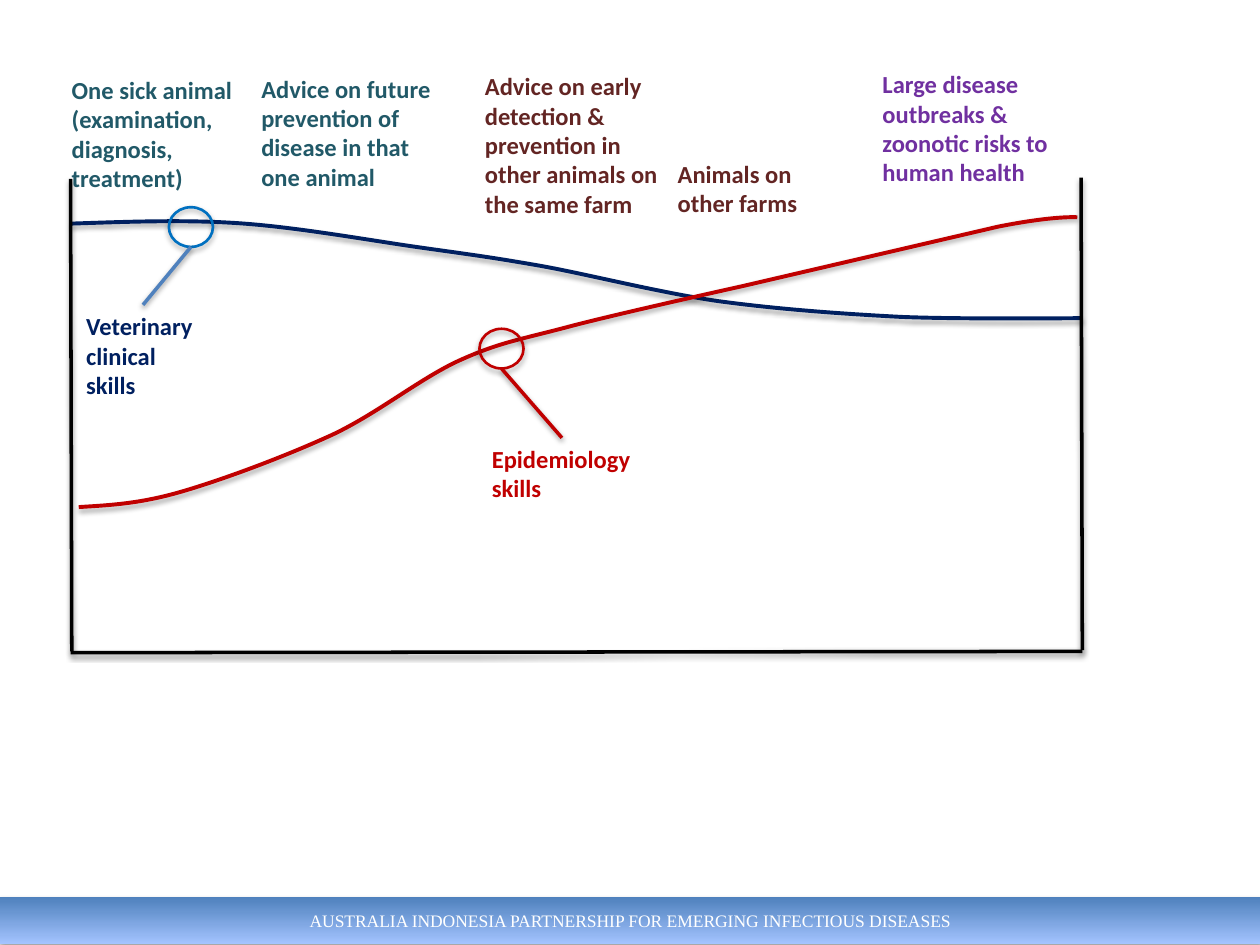
from dataclasses import dataclass

from lxml.etree import SubElement
from pptx import Presentation
from pptx.dml.color import RGBColor
from pptx.enum.shapes import MSO_CONNECTOR, MSO_SHAPE
from pptx.enum.text import MSO_ANCHOR, MSO_AUTO_SIZE, PP_ALIGN
from pptx.oxml.ns import qn
from pptx.util import Inches, Pt


@dataclass(frozen=True)
class Theme:
    """Colours, fonts and sizes of the slide."""
    navy: str = "002060"
    red: str = "C00000"
    teal: str = "215968"
    brown: str = "632523"
    purple: str = "7030A0"
    blue: str = "0070C0"
    steel: str = "4F81BD"
    sky: str = "A4C4FF"
    black: str = "000000"
    white: str = "FFFFFF"
    label_font: str = "Calibri"
    footer_font: str = "Times New Roman"
    label_size: float = 14
    footer_size: float = 10
    curve_width: float = 2.25
    line_width: float = 2
    marker_width: float = 1.5


THEME = Theme()
WIDTH, HEIGHT = Inches(10), Inches(7.5)
COLUMNS, ROWS = 100, 75

CLINICAL_START = (5.6, 17.75)
CLINICAL_SEGMENTS = [
    [(10.2, 17.6), (14.8, 17.4), (19.4, 17.75)],
    [(24, 18.1), (29.5, 19.1), (33.4, 19.65)],
    [(37.3, 20.2), (38.9, 20.4), (42.9, 21.1)],
    [(46.8, 21.8), (52.2, 23.2), (57, 23.9)],
    [(61.8, 24.55), (66.7, 24.9), (71.5, 25.15)],
    [(76.3, 25.35), (85.9, 25.25), (85.9, 25.25)],
    [(85.9, 25.25)],
]
EPIDEMIOLOGY_START = (6.25, 40.25)
EPIDEMIOLOGY_SEGMENTS = [
    [(8.7, 40.1), (11.1, 40), (14.5, 39)],
    [(17.9, 38), (22.7, 36.2), (26.4, 34.5)],
    [(30, 32.8), (33.4, 30), (36.5, 28.6)],
    [(39.6, 27.2), (41.1, 27), (44.9, 26)],
    [(48.6, 25), (59, 22.7), (59, 22.7)],
    [(79.2, 18)],
    [(83.7, 17.1), (85.5, 17.25), (85.5, 17.25)],
    [(85.5, 17.25)],
]


def across(columns):
    """Return the length of a number of grid columns."""
    return round(WIDTH * columns / COLUMNS)


def down(rows):
    """Return the length of a number of grid rows."""
    return round(HEIGHT * rows / ROWS)


def box(left, top, width, height):
    """Return a grid rectangle as slide lengths."""
    return across(left), down(top), across(width), down(height)


def color(value):
    """Return a colour object for a hexadecimal value."""
    return RGBColor.from_string(value)


def add_shadow(shape, opacity=35, distance=1.8):
    """Give a shape a soft shadow straight below it."""
    effects = SubElement(shape._element.spPr, qn("a:effectLst"))
    shadow = SubElement(effects, qn("a:outerShdw"), blurRad=str(Pt(3.1)),
                        dist=str(Pt(distance)), dir="5400000", rotWithShape="0")
    shade = SubElement(shadow, qn("a:srgbClr"), val=THEME.black)
    SubElement(shade, qn("a:alpha"), val=str(opacity * 1000))


def set_line(shape, line_color, width):
    """Set the colour and width of a line."""
    shape.line.color.rgb = color(line_color)
    shape.line.width = Pt(width)


def set_font(paragraph, name, size, font_color, bold=False):
    """Set the font of a paragraph."""
    font = paragraph.font
    font.name, font.size, font.bold = name, Pt(size), bold
    font.color.rgb = color(font_color)


def bend(curve, segments):
    """Join each three points of an outline into one cubic curve."""
    lines = iter(list(curve._element.iter(qn("a:lnTo"))))
    for segment in segments:
        first, *others = [next(lines) for _ in segment]
        if others:
            first.tag = qn("a:cubicBezTo")
        for other in others:
            first.append(other[0])
            other.getparent().remove(other)


def add_curve(slide, start, segments, line_color):
    """Draw an open outline of curved and straight segments."""
    builder = slide.shapes.build_freeform(across(start[0]), down(start[1]))
    builder.add_line_segments([(across(x), down(y)) for segment in segments for x, y in segment],
                              close=False)
    curve = builder.convert_to_shape()
    bend(curve, segments)
    curve.fill.background()
    set_line(curve, line_color, THEME.curve_width)
    add_shadow(curve)


def add_line(slide, start, end, line_color):
    """Draw a straight line between two grid points."""
    connector = slide.shapes.add_connector(
        MSO_CONNECTOR.STRAIGHT, across(start[0]), down(start[1]), across(end[0]), down(end[1]))
    set_line(connector, line_color, THEME.line_width)
    add_shadow(connector, opacity=38, distance=1.6)
    return connector


def add_label(slide, place, lines, font_color, wrap=True):
    """Add a bold label with one paragraph for each line."""
    label = slide.shapes.add_textbox(*box(*place))
    frame = label.text_frame
    frame.word_wrap = wrap
    frame.auto_size = MSO_AUTO_SIZE.SHAPE_TO_FIT_TEXT
    frame.text = "\n".join(lines)
    for paragraph in frame.paragraphs:
        set_font(paragraph, THEME.label_font, THEME.label_size, font_color, bold=True)
    return label


def add_callout(slide, marker_corner, marker_color, leader_color, label):
    """Circle a place on a curve and lead from it to a label."""
    left, top = marker_corner
    width, height = 3.5, 3.15
    marker = slide.shapes.add_shape(MSO_SHAPE.OVAL, *box(left, top, width, height))
    marker.fill.background()
    set_line(marker, marker_color, THEME.marker_width)
    add_shadow(marker)
    bottom = (left + width / 2, top + height)
    add_line(slide, bottom, bottom, leader_color).end_connect(label, 0)


def add_footer(slide, text):
    """Add the shaded band along the bottom of the slide."""
    band = slide.shapes.add_shape(MSO_SHAPE.RECTANGLE, *box(0, 71.2, COLUMNS, 3.75))
    band.fill.gradient()
    band.fill.gradient_angle = 270
    for stop, position, shade in zip(band.fill.gradient_stops, (0, 1), (THEME.steel, THEME.sky)):
        stop.position = position
        stop.color.rgb = color(shade)
    band.line.fill.background()
    add_shadow(band)
    band.text_frame.vertical_anchor = MSO_ANCHOR.MIDDLE
    paragraph = band.text_frame.paragraphs[0]
    paragraph.text = text
    paragraph.alignment = PP_ALIGN.CENTER
    set_font(paragraph, THEME.footer_font, THEME.footer_size, THEME.white)


def main():
    """Build and save the slide."""
    presentation = Presentation()
    presentation.slide_width, presentation.slide_height = WIDTH, HEIGHT
    slide = presentation.slides.add_slide(presentation.slide_layouts[6])

    add_footer(slide, "AUSTRALIA INDONESIA PARTNERSHIP FOR EMERGING INFECTIOUS DISEASES")
    add_curve(slide, CLINICAL_START, CLINICAL_SEGMENTS, THEME.navy)
    add_curve(slide, EPIDEMIOLOGY_START, EPIDEMIOLOGY_SEGMENTS, THEME.red)
    for start, end in (((5.6, 14.2), (5.7, 51.7)), ((85.9, 51.7), (5.6, 51.8)),
                       ((85.8, 14.1), (85.9, 51.6))):
        add_line(slide, start, end, THEME.black)

    clinical = add_label(slide, (5.85, 24.2, 11, 8.1), ["Veterinary", "clinical", "skills"],
                         THEME.navy, wrap=False)
    epidemiology = add_label(slide, (38.05, 34.75, 13.1, 5.7), ["Epidemiology", "skills"],
                             THEME.red, wrap=False)
    for left, top, height, font_color, lines in (
        (4.7, 5.45, 10.4, THEME.teal, ["One sick animal", "(examination, diagnosis, treatment)"]),
        (19.75, 5.35, 10.4, THEME.teal,
         ["Advice on future prevention of disease in that one animal"]),
        (37.5, 5.15, 12.8, THEME.brown,
         ["Advice on early detection & prevention in other animals on the same farm"]),
        (52.8, 12.1, 5.7, THEME.brown, ["Animals on other farms"]),
        (69.05, 5, 10.4, THEME.purple,
         ["Large disease outbreaks & zoonotic risks to human health"]),
    ):
        add_label(slide, (left, top, 15.8, height), lines, font_color)

    add_callout(slide, (13.4, 16.45), THEME.blue, THEME.steel, clinical)
    add_callout(slide, (38.05, 26.1), THEME.red, THEME.red, epidemiology)
    presentation.save("out.pptx")


if __name__ == "__main__":
    main()
